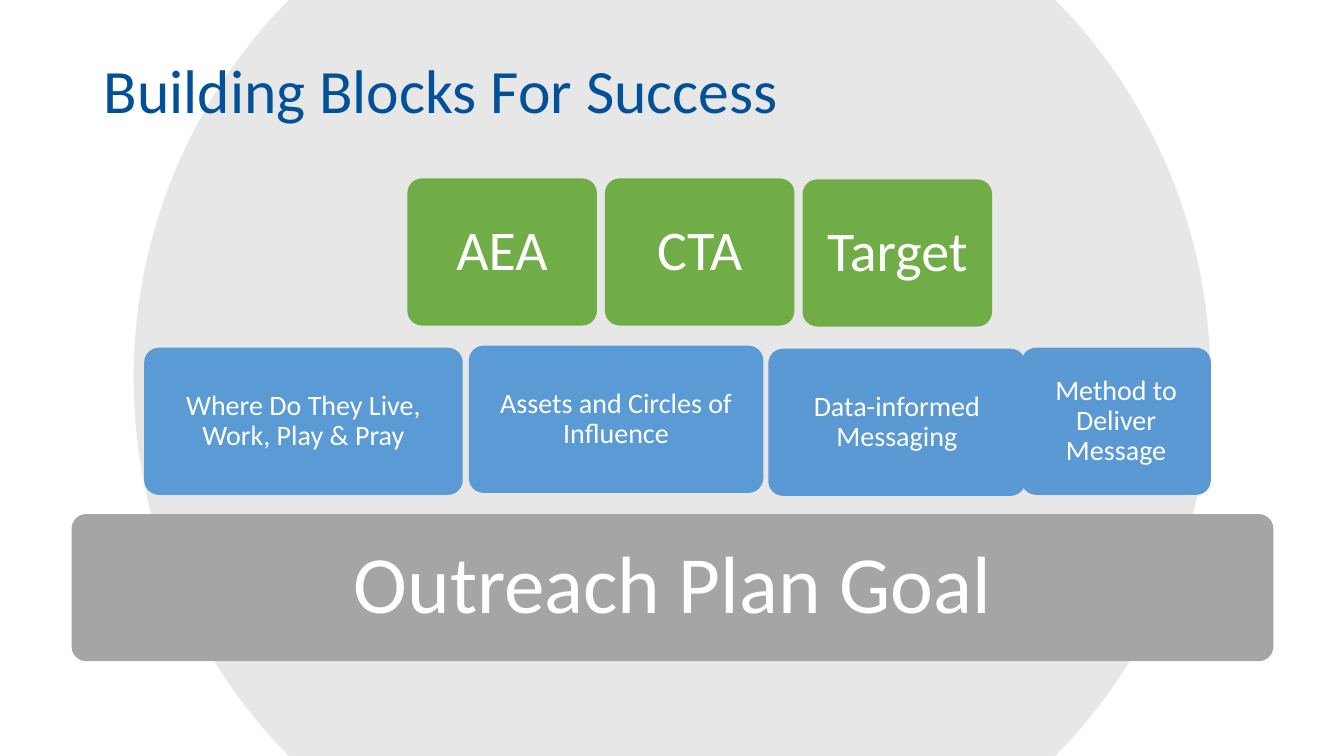
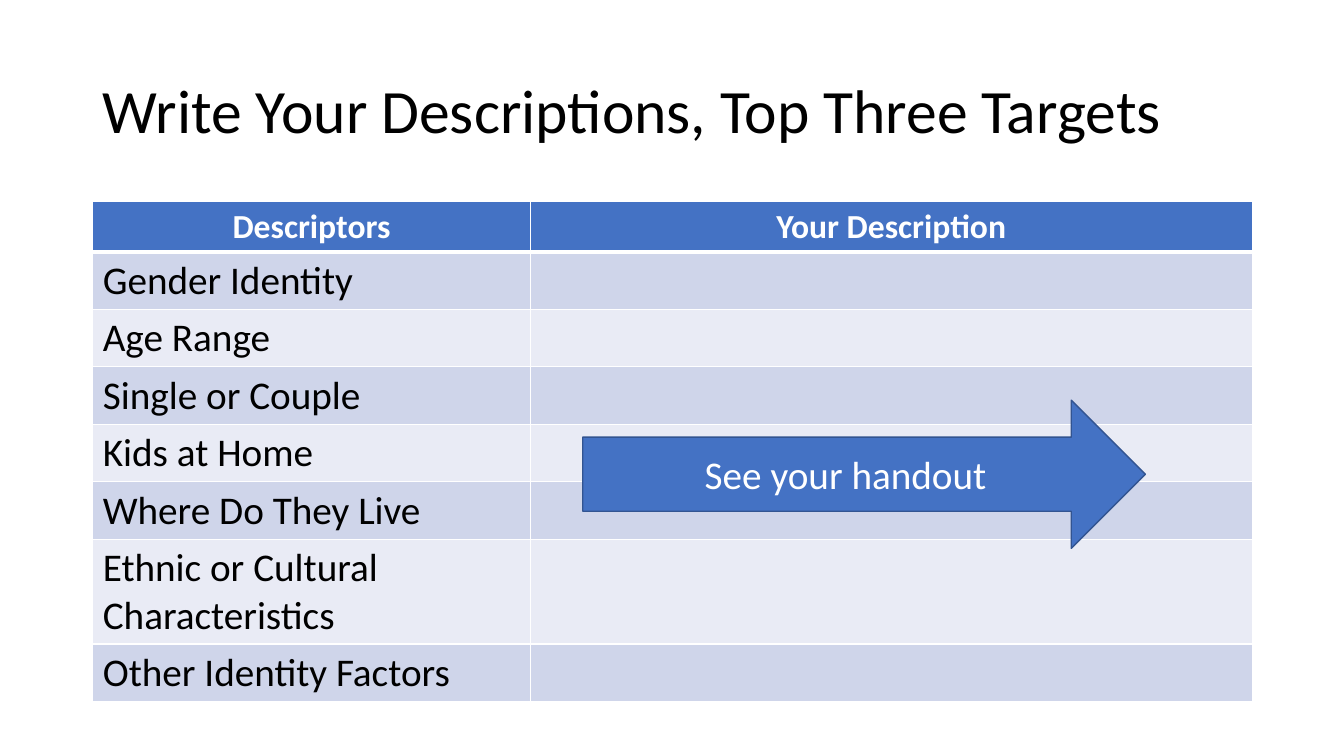
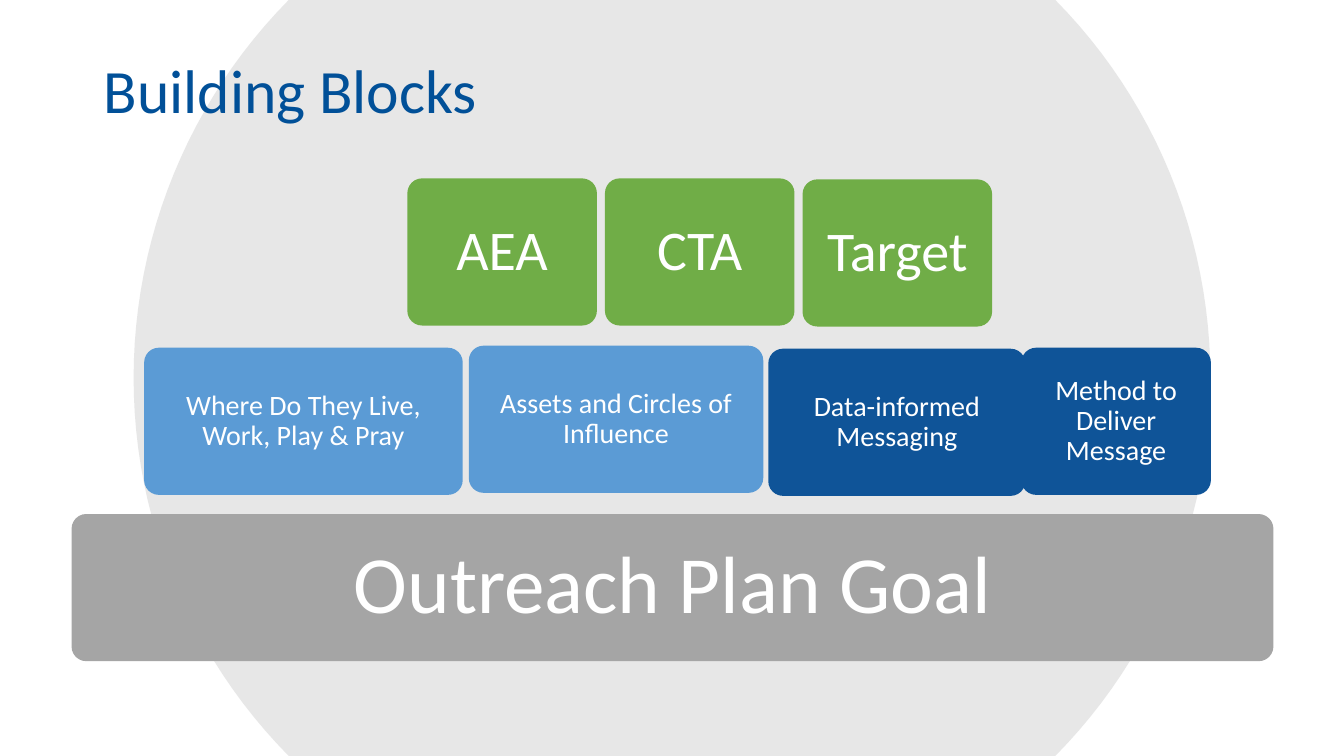
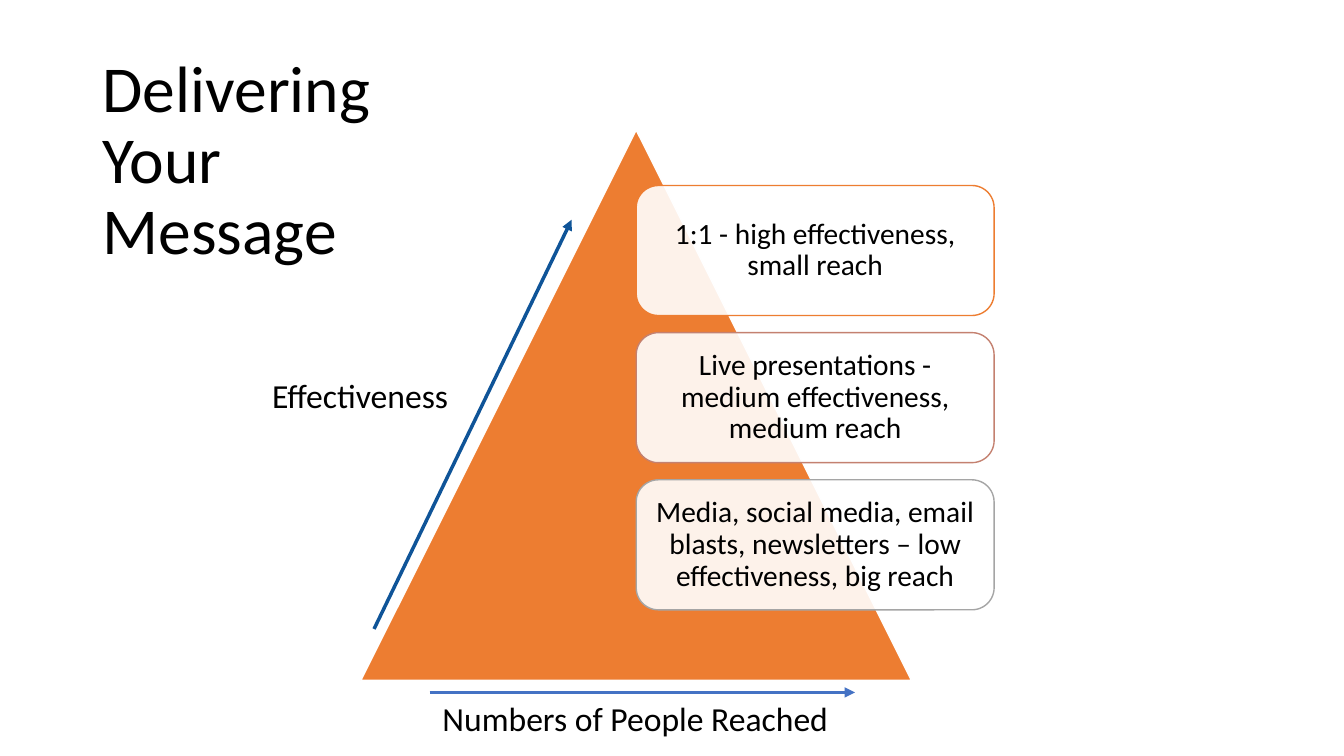
from math import asin, cos, pi, sin

from pptx import Presentation
from pptx.dml.color import RGBColor
from pptx.enum.shapes import MSO_CONNECTOR, MSO_SHAPE
from pptx.enum.text import MSO_ANCHOR, PP_ALIGN
from pptx.oxml.ns import qn
from pptx.oxml.xmlchemy import OxmlElement
from pptx.util import Inches, Pt

WHITE = RGBColor(0xFF, 0xFF, 0xFF)
BLACK = RGBColor(0x00, 0x00, 0x00)
DISC = RGBColor(0xD9, 0xD9, 0xD9)
GRAY = RGBColor(0xA5, 0xA5, 0xA5)
GREEN = RGBColor(0x70, 0xAD, 0x47)
SKY = RGBColor(0x5B, 0x9B, 0xD5)
SOFT = RGBColor(0x5A, 0x99, 0xD3)
NAVY = RGBColor(0x0F, 0x54, 0x98)
TITLE = RGBColor(0x01, 0x50, 0x98)
BLUE = RGBColor(0x44, 0x72, 0xC4)
EDGE = RGBColor(0x32, 0x54, 0x91)
BAND = RGBColor(0xCF, 0xD5, 0xEA)
PALE = RGBColor(0xE9, 0xEB, 0xF5)
ORANGE = RGBColor(0xED, 0x7D, 0x31)
ROSE = RGBColor(0xC4, 0x81, 0x70)

FONT = "Calibri"
WIDE, HIGH = 13.33, 7.5


class Deck:
    """Holds the style and the current slide."""

    def __init__(self):
        self.prs = Presentation()
        self.prs.slide_width = Inches(WIDE)
        self.prs.slide_height = Inches(HIGH)
        self.shapes = None

    def page(self):
        slide = self.prs.slides.add_slide(self.prs.slide_layouts[6])
        self.shapes = slide.shapes

    def put(self, frame, text, size, color=BLACK, align=PP_ALIGN.LEFT,
            space=1.0, bold=False):
        frame.word_wrap = True
        para = frame.paragraphs[0]
        para.text = text
        para.alignment = align
        para.line_spacing = space
        font = para.font
        font.name, font.size, font.bold = FONT, Pt(size), bold
        font.color.rgb = color

    def label(self, box, text, size=24, color=BLACK, align=PP_ALIGN.LEFT,
              space=1.0, anchor=MSO_ANCHOR.TOP):
        frame = self.shapes.add_textbox(*map(Inches, box)).text_frame
        frame.vertical_anchor = anchor
        self.put(frame, text, size, color, align, space)

    def title(self, box, text, size=44):
        self.label(box, text, size, space=0.9, anchor=MSO_ANCHOR.MIDDLE)

    def paint(self, shape, fill, line=None, alpha=None):
        shape.shadow.inherit = False
        shape.fill.solid()
        shape.fill.fore_color.rgb = fill
        if alpha:
            node = OxmlElement("a:alpha")
            node.set("val", str(alpha * 1000))
            shape.element.spPr.find(".//" + qn("a:srgbClr")).append(node)
        if line is None:
            shape.line.fill.background()
        else:
            shape.line.color.rgb = line
            shape.line.width = Pt(1)

    def shape(self, kind, box, fill, line=None, alpha=None):
        shape = self.shapes.add_shape(kind, *map(Inches, box))
        self.paint(shape, fill, line, alpha)
        return shape

    def block(self, box, text, size, fill, inset, color=WHITE, line=None,
              alpha=None, bend=0.1):
        shape = self.shape(MSO_SHAPE.ROUNDED_RECTANGLE, box, fill, line, alpha)
        shape.adjustments[0] = bend
        frame = shape.text_frame
        frame.margin_left = frame.margin_right = Inches(inset)
        frame.margin_top = frame.margin_bottom = Inches(inset)
        frame.vertical_anchor = MSO_ANCHOR.MIDDLE
        self.put(frame, text, size, color, PP_ALIGN.CENTER, 0.9)

    def disc(self, radius=5.34, steps=48):
        """Circle centred on the slide, cut off at its top and bottom."""
        half = asin(HIGH / 2 / radius)
        turns = [mid - half + 2 * half * i / steps
                 for mid in (0, pi) for i in range(steps + 1)]
        spots = [(Inches(WIDE / 2 + radius * cos(t)),
                  Inches(HIGH / 2 + radius * sin(t))) for t in turns]
        form = self.shapes.build_freeform(*spots[0])
        form.add_line_segments(spots[1:], close=True)
        self.paint(form.convert_to_shape(), DISC, alpha=62)

    def arrow(self, start, end, color):
        line = self.shapes.add_connector(
            MSO_CONNECTOR.STRAIGHT, *map(Inches, start + end))
        line.line.color.rgb = color
        line.line.width = Pt(2.5)
        tip = OxmlElement("a:tailEnd")
        tip.set("type", "triangle")
        props = line.element.spPr
        props.find(qn("a:ln")).append(tip)
        props.append(OxmlElement("a:effectLst"))

    def border(self, props, top, base):
        widths = (("L", 1), ("R", 1), ("T", top), ("B", base))
        for spot, (side, width) in enumerate(widths):
            edge = OxmlElement("a:ln" + side)
            edge.set("w", str(Pt(width)))
            fill = OxmlElement("a:solidFill")
            tint = OxmlElement("a:srgbClr")
            tint.set("val", str(WHITE))
            fill.append(tint)
            edge.append(fill)
            props.insert(spot, edge)

    def table(self, box, heads, names, cols, rows):
        frame = self.shapes.add_table(len(rows), len(cols), *map(Inches, box))
        table = frame.table
        for col, width in zip(table.columns, cols):
            col.width = Inches(width)
        for i, height in enumerate(rows):
            table.rows[i].height = Inches(height)
            texts = (names[i - 1], "") if i else heads
            for j, text in enumerate(texts):
                cell = table.cell(i, j)
                cell.fill.solid()
                cell.fill.fore_color.rgb = (BAND if i % 2 else PALE) if i else BLUE
                if i == 0:
                    self.put(cell.text_frame, text, 24, WHITE,
                             PP_ALIGN.CENTER, bold=True)
                elif text:
                    self.put(cell.text_frame, text, 28)
        for spot, props in enumerate(frame.element.iter(qn("a:tcPr"))):
            i = spot // len(cols)
            self.border(props, 3 if i == 1 else 1, 1 if i else 3)

    def tower(self, title, accent):
        """Slide of blocks stacked on the goal; accent fills the last two."""
        self.page()
        self.disc()
        tall = 1.46
        self.block((0.71, 5.1, 11.92, tall), "Outreach Plan Goal", 58, GRAY, 0.24)
        for left, top, width, text, fill in (
            (1.43, 3.45, 3.16, "Where Do They Live, Work, Play & Pray", SKY),
            (4.65, 3.43, 2.92, "Assets and Circles of Influence", SKY),
            (7.62, 3.46, 2.55, "Data-informed Messaging", accent),
            (10.13, 3.45, 1.88, "Method to Deliver Message", accent),
        ):
            self.block((left, top, width, tall), text, 20, fill, 0.08)
        tops = (("AEA", 1.77), ("CTA", 1.77), ("Target", 1.78))
        for i, (text, top) in enumerate(tops):
            self.block((4.04 + 1.96 * i, top, 1.88, tall), text, 40, GREEN, 0.17)
        self.label((0.93, 0.47, 7.18, 0.84), title, 44, TITLE)


def main():
    deck = Deck()

    # Slide 1: building blocks
    deck.tower("Building Blocks For Success", SOFT)

    # Slide 2: table of descriptors
    deck.page()
    deck.title((0.92, 0.4, 11.5, 1.45), "Write Your Descriptions, Top Three Targets")
    names = ("Gender Identity", "Age Range", "Single or Couple", "Kids at Home",
             "Where Do They Live", "Ethnic or Cultural Characteristics",
             "Other Identity Factors")
    deck.table((0.92, 2, 11.5, 4.93), ("Descriptors", "Your Description"), names,
               (4.34, 7.16), [0.49] + [0.57] * 5 + [1.04, 0.57])
    hint = deck.shape(MSO_SHAPE.RIGHT_ARROW, (5.78, 3.97, 5.58, 1.47), BLUE, EDGE)
    hint.text_frame.vertical_anchor = MSO_ANCHOR.MIDDLE
    deck.put(hint.text_frame, "See your handout", 28, WHITE, PP_ALIGN.CENTER)

    # Slide 3: building blocks, last two marked
    deck.tower("Building Blocks", NAVY)

    # Slide 4: pyramid of reach
    deck.page()
    deck.title((0.92, 0.61, 3.19, 2), "Delivering Your Message", 46.8)
    deck.shape(MSO_SHAPE.ISOSCELES_TRIANGLE, (3.58, 1.29, 5.46, 5.46), ORANGE, WHITE)
    tiers = (
        ("1:1 - high effectiveness, small reach", ORANGE),
        ("Live presentations - medium effectiveness, medium reach", ROSE),
        ("Media, social media, email blasts, newsletters – low effectiveness, "
         "big reach", GRAY),
    )
    for i, (text, line) in enumerate(tiers):
        deck.block((6.31, 1.84 + 1.46 * i, 3.55, 1.29), text, 21, WHITE, 0.09,
                   BLACK, line, alpha=90, bend=0.17)
    deck.label((4.19, 6.87, 4.22, 0.5), "Numbers of People Reached",
               align=PP_ALIGN.CENTER)
    deck.label((2.6, 3.67, 2.22, 0.5), "Effectiveness")
    deck.arrow((3.71, 6.24), (5.67, 2.18), NAVY)
    deck.arrow((4.26, 6.87), (8.48, 6.87), BLUE)

    deck.prs.save("out.pptx")


if __name__ == "__main__":
    main()
